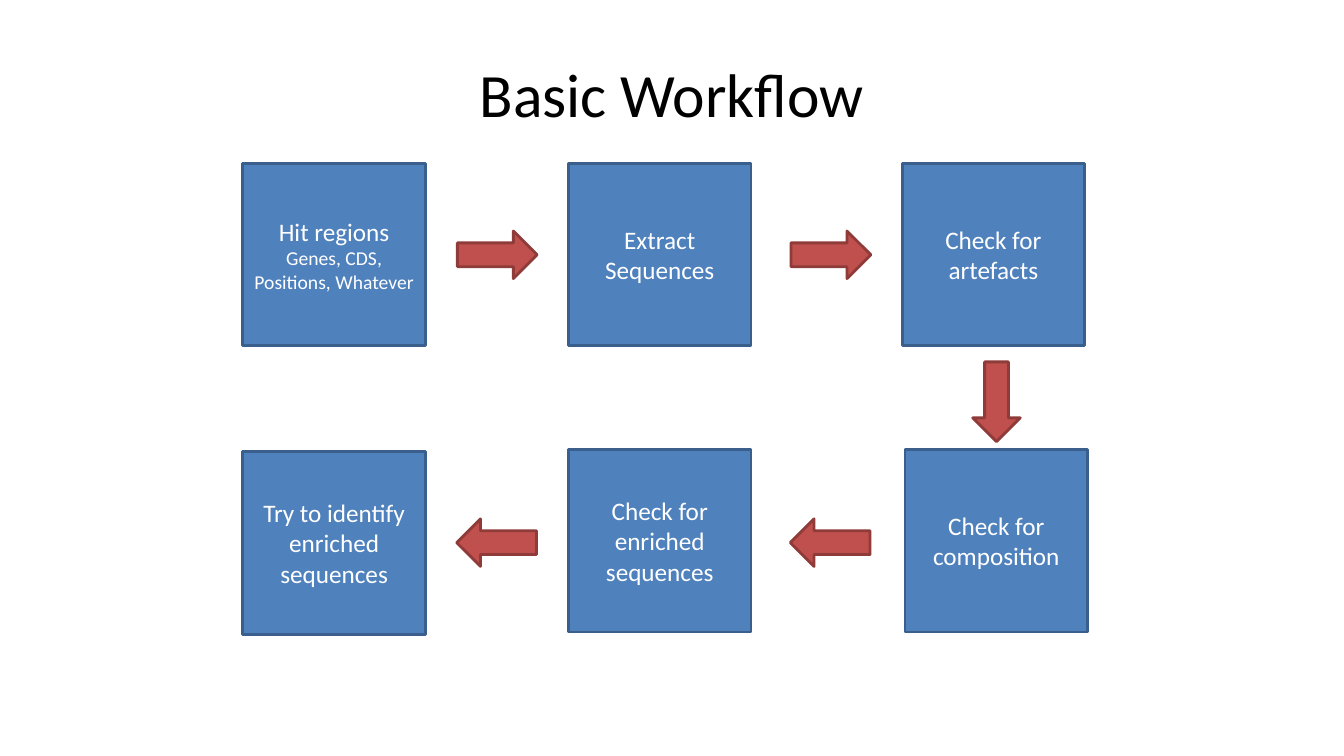
from pptx import Presentation
from pptx.dml.color import RGBColor
from pptx.enum.shapes import MSO_SHAPE
from pptx.enum.text import MSO_ANCHOR, PP_ALIGN
from pptx.util import Pt

TITLE = "Basic Workflow"
# left, top, lines of (text, size)
STEPS = [
    (173.5, 116.6, [("Hit regions", 18), ("Genes, CDS, Positions, Whatever", 14)]),
    (406.1, 116.6, [("Extract Sequences", 18)]),
    (644.4, 116.6, [("Check for artefacts", 18)]),
    (646.5, 321.1, [("Check for composition", 18)]),
    (406.1, 321.1, [("Check for enriched sequences", 18)]),
    (173.5, 322.6, [("Try to identify enriched sequences", 18)]),
]
# left, top, rotation
ARROWS = [
    (326.7, 165, 0),
    (565, 165, 0),
    (326.2, 370.6, 180),
    (564.5, 370.6, 180),
    (683.3, 270, 90),
]
SIDE = 130.4
LONG, THICK = 57, 34

FONT = "Calibri"
BLACK = RGBColor(0x00, 0x00, 0x00)
WHITE = RGBColor(0xFF, 0xFF, 0xFF)
BLUE = RGBColor(0x4F, 0x81, 0xBD)
NAVY = RGBColor(0x3A, 0x5F, 0x8C)
RED = RGBColor(0xC0, 0x50, 0x4D)
MAROON = RGBColor(0x8E, 0x3B, 0x39)

RECT, ARROW = MSO_SHAPE.RECTANGLE, MSO_SHAPE.RIGHT_ARROW
MIDDLE, CENTER = MSO_ANCHOR.MIDDLE, PP_ALIGN.CENTER


def write(shape, lines, color):
    """Fill a shape with centred paragraphs of (text, size)."""
    frame = shape.text_frame
    frame.word_wrap = True
    frame.vertical_anchor = MIDDLE
    for i, (text, size) in enumerate(lines):
        para = frame.paragraphs[0] if i == 0 else frame.add_paragraph()
        para.alignment = CENTER
        run = para.add_run()
        run.text = text
        run.font.color.rgb = color
        for name, value in {"name": FONT, "size": Pt(size)}.items():
            setattr(run.font, name, value)


def draw(slide, kind, box, fill, edge):
    shape = slide.shapes.add_shape(kind, *map(Pt, box))
    shape.shadow.inherit = False
    shape.fill.solid()
    shape.fill.fore_color.rgb = fill
    shape.line.color.rgb = edge
    shape.line.width = Pt(2)
    return shape


def main():
    deck = Presentation()
    deck.slide_width, deck.slide_height = Pt(960), Pt(540)
    slide = deck.slides.add_slide(deck.slide_layouts[6])

    title = slide.shapes.add_textbox(Pt(48), Pt(21.6), Pt(864), Pt(90))
    write(title, [(TITLE, 44)], BLACK)

    for left, top, lines in STEPS:
        step = draw(slide, RECT, (left, top, SIDE, SIDE), BLUE, NAVY)
        write(step, lines, WHITE)

    for left, top, turn in ARROWS:
        arrow = draw(slide, ARROW, (left, top, LONG, THICK), RED, MAROON)
        arrow.rotation = turn

    deck.save("out.pptx")


if __name__ == "__main__":
    main()
